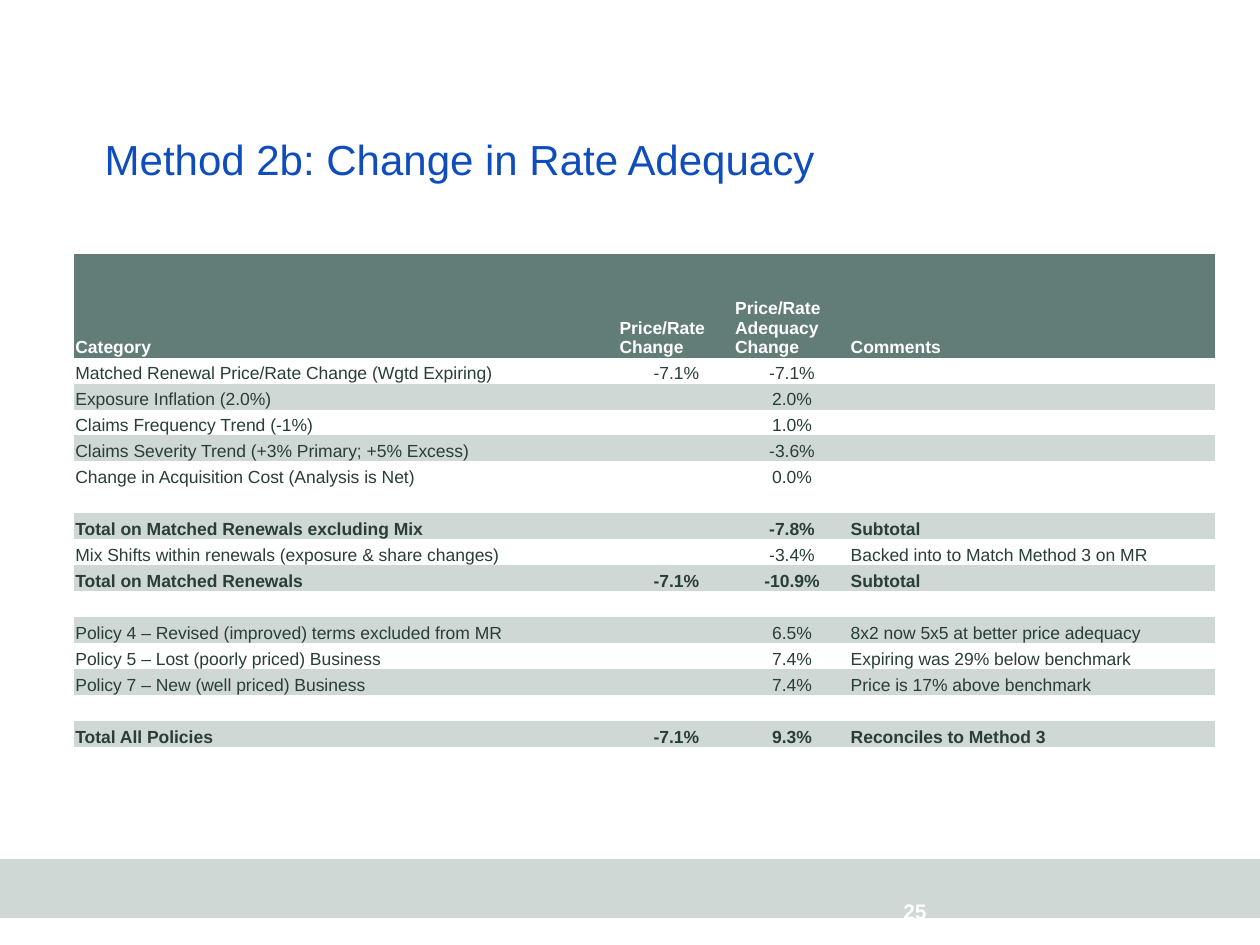
from dataclasses import dataclass

from lxml import etree
from pptx import Presentation
from pptx.dml.color import RGBColor
from pptx.enum.shapes import MSO_SHAPE
from pptx.enum.text import MSO_ANCHOR, MSO_AUTO_SIZE, PP_ALIGN
from pptx.oxml.ns import qn
from pptx.util import Cm, Pt

RECTANGLE = MSO_SHAPE.RECTANGLE
BOTTOM = MSO_ANCHOR.BOTTOM
NO_FIT = MSO_AUTO_SIZE.NONE
LEFT, CENTER = PP_ALIGN.LEFT, PP_ALIGN.CENTER
PLAIN_TABLE = "{2D5ABB26-0587-4C30-8999-92F81FD0307C}"

HEADINGS = ("Category", "Price/Rate Change", "Price/Rate Adequacy Change", "Comments")
BLANK = ("", "", "", "")
RATE_CHANGES = (
    ("Matched Renewal Price/Rate Change (Wgtd Expiring)", "-7.1%", "-7.1%", ""),
    ("Exposure Inflation (2.0%)", "", "2.0%", ""),
    ("Claims Frequency Trend (-1%)", "", "1.0%", ""),
    ("Claims Severity Trend (+3% Primary; +5% Excess)", "", "-3.6%", ""),
    ("Change in Acquisition Cost (Analysis is Net)", "", "0.0%", ""),
    BLANK,
    ("Total on Matched Renewals excluding Mix", "", "-7.8%", "Subtotal"),
    ("Mix Shifts within renewals (exposure & share changes)", "", "-3.4%",
     "Backed into to Match Method 3 on MR"),
    ("Total on Matched Renewals", "-7.1%", "-10.9%", "Subtotal"),
    BLANK,
    ("Policy 4 – Revised (improved) terms excluded from MR", "", "6.5%",
     "8x2 now 5x5 at better price adequacy"),
    ("Policy 5 – Lost (poorly priced) Business", "", "7.4%",
     "Expiring was 29% below benchmark"),
    ("Policy 7 – New (well priced) Business", "", "7.4%",
     "Price is 17% above benchmark"),
    BLANK,
    ("Total All Policies", "-7.1%", "9.3%", "Reconciles to Method 3"),
)


@dataclass(frozen=True)
class Theme:
    font: str = "Arial"
    title: RGBColor = RGBColor(0x0F, 0x4D, 0xBC)
    header: RGBColor = RGBColor(0x62, 0x7D, 0x77)
    band: RGBColor = RGBColor(0xD0, 0xD8, 0xD6)
    text: RGBColor = RGBColor(0x28, 0x3E, 0x36)
    light: RGBColor = RGBColor(0xFF, 0xFF, 0xFF)
    title_size: int = 24
    number_size: int = 12
    table_size: int = 10


def apply(target, values):
    for name, value in values.items():
        setattr(target, name, value)


class SlideBuilder:
    """Holds the theme and the current slide, and adds each kind of element."""

    def __init__(self, slide, theme):
        self.slide = slide
        self.theme = theme

    def add_text(self, para, text, size, color, bold=False, align=LEFT):
        para.alignment = align
        if not text:
            etree.SubElement(para._p, qn("a:endParaRPr"), sz=str(size * 100))
            return
        span = para.add_run()
        span.text = text
        apply(span.font, {"name": self.theme.font, "size": Pt(size), "bold": bold})
        span.font.color.rgb = color

    def frame(self, box):
        apply(box.text_frame, {
            "margin_left": 0, "margin_right": 0, "margin_top": 0, "margin_bottom": 0,
            "vertical_anchor": BOTTOM, "word_wrap": True, "auto_size": NO_FIT,
        })
        return box.text_frame.paragraphs[0]

    def title(self, text, left, top, width, height):
        box = self.slide.shapes.title
        apply(box, {"left": Cm(left), "top": Cm(top), "width": Cm(width), "height": Cm(height)})
        para = self.frame(box)
        para.line_spacing = 0.9
        self.add_text(para, text, self.theme.title_size, self.theme.title)

    def bar(self, left, top, width, height):
        box = self.slide.shapes.add_shape(RECTANGLE, Cm(left), Cm(top), Cm(width), Cm(height))
        box.shadow.inherit = False
        box.fill.solid()
        box.fill.fore_color.rgb = self.theme.band
        box.line.fill.background()

    def number(self, text, left, top, width, height):
        box = self.slide.shapes.add_textbox(Cm(left), Cm(top), Cm(width), Cm(height))
        self.add_text(self.frame(box), text, self.theme.number_size, self.theme.light, True)

    def cell(self, cell, text, color, fill, bold, align):
        apply(cell, {
            "margin_left": Cm(0.02), "margin_right": Cm(0.02), "margin_top": Cm(0.02),
            "margin_bottom": 0, "vertical_anchor": BOTTOM,
        })
        if fill is None:
            cell.fill.background()
        else:
            cell.fill.solid()
            cell.fill.fore_color.rgb = fill
        para = cell.text_frame.paragraphs[0]
        self.add_text(para, text, self.theme.table_size, color, bold, align)

    def table(self, headings, rows, left, top, widths, header_height, height):
        shape = self.slide.shapes.add_table(
            len(rows) + 1, len(headings), Cm(left), Cm(top), Cm(sum(widths)), Cm(height))
        table = shape.table
        apply(table, {"first_row": False, "horz_banding": False})
        table._tbl.tblPr.find(qn("a:tableStyleId")).text = PLAIN_TABLE
        for column, width in zip(table.columns, widths):
            column.width = Cm(width)
        for row in table.rows:
            row.height = Cm((height - header_height) / len(rows))
        table.rows[0].height = Cm(header_height)

        for index, heading in enumerate(headings):
            self.cell(table.cell(0, index), heading, self.theme.light, self.theme.header, True, LEFT)
        banded = True
        for number, values in enumerate(rows, 1):
            banded = bool(values[0]) and not banded
            fill = self.theme.band if banded else None
            bold = values[0].startswith("Total")
            for index, value in enumerate(values):
                align = CENTER if index in (1, 2) else LEFT
                self.cell(table.cell(number, index), value, self.theme.text, fill, bold, align)


def main():
    deck = Presentation()
    apply(deck, {"slide_width": Cm(25.4), "slide_height": Cm(19.05)})
    page = SlideBuilder(deck.slides.add_slide(deck.slide_layouts[5]), Theme())
    page.bar(0, 17.32, 25.4, 1.19)
    page.number("25", 18.21, 17.35, 5.92, 1.27)
    page.title("Method 2b: Change in Rate Adequacy", 2.11, 1.32, 16.2, 2.41)
    page.table(HEADINGS, RATE_CHANGES, 1.5, 5.13, (10.97, 2.33, 2.33, 7.37), 2.08, 9.93)
    deck.save("out.pptx")


if __name__ == "__main__":
    main()
